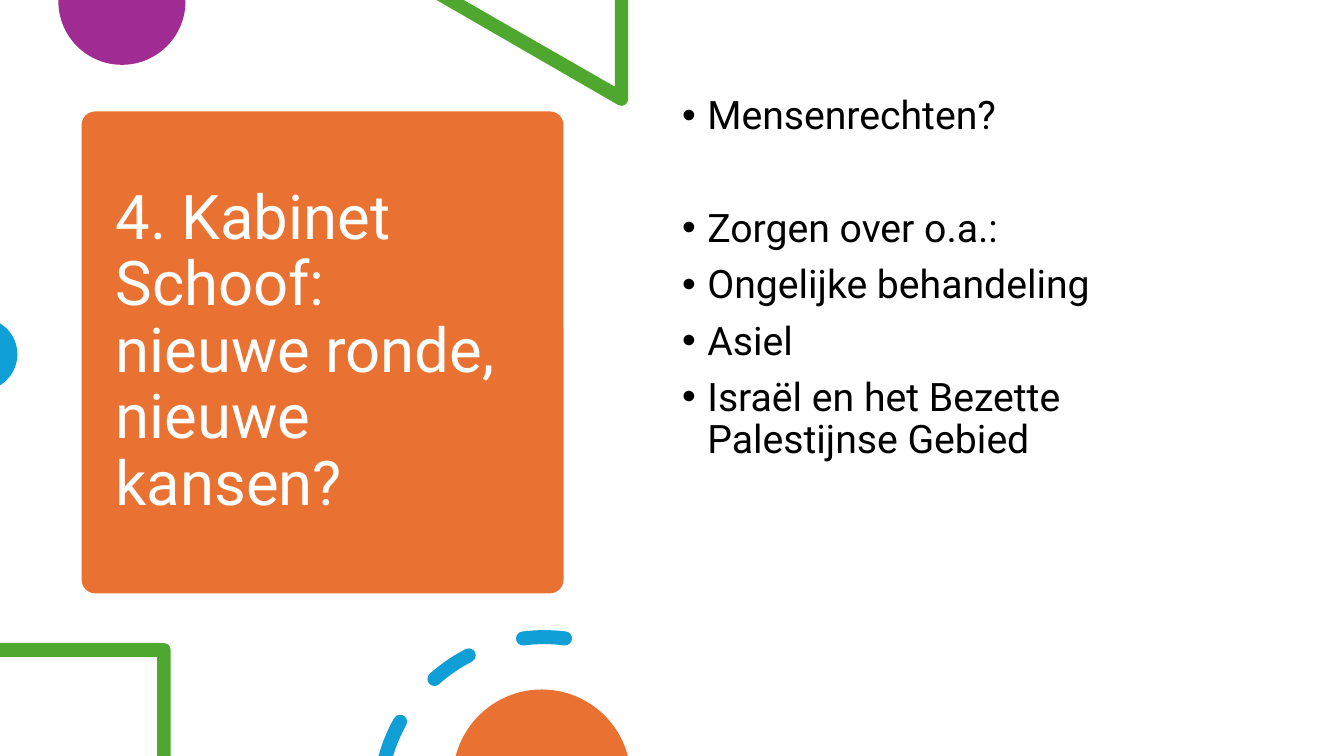
import math

import pptx
import pptx.dml.color
import pptx.enum.shapes
import pptx.enum.text
import pptx.oxml
import pptx.oxml.ns
import pptx.util

Pt = pptx.util.Pt
FONT = "Roboto"
COLORS = {
    "orange": "E97132",
    "purple": "A02B93",
    "green": "4EA72E",
    "blue": "0F9ED5",
    "white": "FFFFFF",
    "black": "000000",
}
TITLE = "4. Kabinet Schoof: nieuwe ronde, nieuwe kansen?"
# Each bullet with the space before it
BULLETS = [
    ("Mensenrechten?", 0),
    ("Zorgen over o.a.:", 50.4),
    ("Ongelijke behandeling", 10),
    ("Asiel", 10),
    ("Israël en het Bezette Palestijnse Gebied", 10),
]


def rgb(color):
    return pptx.dml.color.RGBColor.from_string(COLORS[color])


def paint(shape, color):
    shape.shadow.inherit = False
    shape.fill.solid()
    shape.fill.fore_color.rgb = rgb(color)
    shape.line.fill.background()


def write(paragraph, text, size, color):
    run = paragraph.add_run()
    run.text = text
    run.font.name = FONT
    run.font.size = Pt(size)
    run.font.color.rgb = rgb(color)


def on_circle(x, y, radius, degrees):
    """Point at an angle clockwise from the right."""
    angle = math.radians(degrees)
    return x + radius * math.cos(angle), y + radius * math.sin(angle)


def corners(*points):
    return [(point,) for point in points]


def arc(x, y, radius, start, end):
    """Line to the start of the arc, then one Bézier curve per quadrant."""
    low, high = sorted((start, end))
    quarters = [a for a in range(-360, 721, 90) if low < a < high]
    stops = sorted([start, *quarters, end], reverse=start > end)
    segments = corners(on_circle(x, y, radius, start))
    for a, b in zip(stops, stops[1:]):
        pull = 4 / 3 * math.tan(math.radians(b - a) / 4)
        reach = radius * math.hypot(1, pull)
        turn = math.degrees(math.atan(pull))
        segments.append((
            on_circle(x, y, reach, a + turn),
            on_circle(x, y, reach, b - turn),
            on_circle(x, y, radius, b),
        ))
    return segments


def without_empty_lines(outline):
    kept = outline[:1]
    for segment in outline[1:]:
        if len(segment) > 1 or math.dist(segment[-1], kept[-1][-1]) > 0.1:
            kept.append(segment)
    return kept


def draw_outlines(slide, box, color, *outlines):
    """Fill closed outlines, given relative to the box, as one freeform."""
    left, top, _, _ = box
    outlines = [without_empty_lines(outline) for outline in outlines]
    builder = None
    for outline in outlines:
        first, *rest = [
            (Pt(left + x), Pt(top + y)) for segment in outline for x, y in segment
        ]
        if builder is None:
            builder = slide.shapes.build_freeform(*first, scale=1.0)
        else:
            builder.move_to(*first)
        builder.add_line_segments(rest, close=True)
    shape = builder.convert_to_shape()
    paint(shape, color)

    # Join each run of three line nodes that stands for a curve
    qn = pptx.oxml.ns.qn
    lines = iter(list(shape._element.iter(qn("a:lnTo"))))
    for outline in outlines:
        for segment in outline[1:]:
            nodes = [next(lines) for _ in segment]
            if len(nodes) == 3:
                nodes[0].tag = qn("a:cubicBezTo")
                for node in nodes[1:]:
                    nodes[0].append(node[0])
                    node.getparent().remove(node)


def ring_dash(x, y, radius, half_width, start, end):
    """Round-ended piece of a ring."""
    return (
        arc(x, y, radius + half_width, start, end)
        + arc(*on_circle(x, y, radius, end), half_width, end, end + 180)
        + arc(x, y, radius - half_width, end, start)
        + arc(*on_circle(x, y, radius, start), half_width, start + 180, start + 360)
    )


def add_top_decoration(slide, box):
    draw_outlines(
        slide, box, "purple", corners((132.5, 0), (41.8, 0)) + arc(87.1, 0.9, 45.4, 180, 0)
    )
    triangle = corners((448.6, 0), (439.2, 0), (439.2, 61.9), (331.2, 0), (311.8, 0))
    draw_outlines(slide, box, "green", triangle + arc(443.9, 70.9, 4.7, 120, 0))


def add_left_decoration(slide, box):
    draw_outlines(slide, box, "blue", arc(-13.6, 22, 26, -58.4, 58.4))


def add_bottom_decoration(slide, box):
    bottom = box[3]
    frame = corners((0, 9.4), (0, 19.4), (112.3, 19.4), (112.3, bottom), (121.8, bottom))
    draw_outlines(slide, box, "green", frame + arc(117.2, 14, 4.6, 360, 270))

    x, y, radius, half_width = 388.8, 123.1, 118, 5
    cut_dash = (
        arc(x, y, radius + half_width, 195.6, 209.2)
        + arc(*on_circle(x, y, radius, 209.2), half_width, 209.2, 389.2)
        + arc(x, y, radius - half_width, 209.2, 197)
    )
    whole_dashes = [
        ring_dash(x, y, radius, half_width, *span) for span in [(228.3, 242.8), (262.6, 277.2)]
    ]
    draw_outlines(slide, box, "blue", cut_dash, *whole_dashes)
    draw_outlines(slide, box, "orange", arc(387, 106, 63.5, 194.6, 345.4))


def add_title_card(slide, box):
    left, top, width, height = box
    card = slide.shapes.add_shape(
        pptx.enum.shapes.MSO_SHAPE.ROUNDED_RECTANGLE, *map(Pt, box)
    )
    card.adjustments[0] = 0.028
    paint(card, "orange")

    title = slide.shapes.title
    title.left, title.top = Pt(left + 17.1), Pt(top + 8)
    title.width, title.height = Pt(width - 34), Pt(height - 15.8)
    card._element.addnext(title._element)
    frame = title.text_frame
    frame.word_wrap = True
    frame.auto_size = pptx.enum.text.MSO_AUTO_SIZE.NONE
    frame.vertical_anchor = pptx.enum.text.MSO_ANCHOR.MIDDLE
    heading = frame.paragraphs[0]
    heading.alignment = pptx.enum.text.PP_ALIGN.LEFT
    heading.line_spacing = 0.9
    write(heading, TITLE, 44, "white")


def add_bullets(slide, box):
    frame = slide.shapes.add_textbox(*map(Pt, box)).text_frame
    frame.word_wrap = True
    for index, (text, space) in enumerate(BULLETS):
        point = frame.add_paragraph() if index else frame.paragraphs[0]
        point.line_spacing = 0.9
        point.space_before = Pt(space)
        properties = point._p.get_or_add_pPr()
        properties.set("marL", str(Pt(18)))
        properties.set("indent", str(-Pt(18)))
        namespace = pptx.oxml.ns.nsdecls("a")
        for mark in ('buFont typeface="Arial"', 'buChar char="•"'):
            name, attribute = mark.split()
            properties.append(pptx.oxml.parse_xml(f"<a:{name} {namespace} {attribute}/>"))
        write(point, text, 28, "black")


def main():
    deck = pptx.Presentation()
    deck.slide_width, deck.slide_height = Pt(960), Pt(540)
    slide = deck.slides.add_slide(deck.slide_layouts[5])
    add_title_card(slide, (58.3, 79.6, 344.2, 344.2))
    add_top_decoration(slide, (0, 0, 450, 76))
    add_left_decoration(slide, (0, 231.1, 13, 44))
    add_bullets(slide, (480.2, 64.8, 414, 385.2))
    add_bottom_decoration(slide, (0, 450, 450, 90))
    deck.save("out.pptx")


if __name__ == "__main__":
    main()
